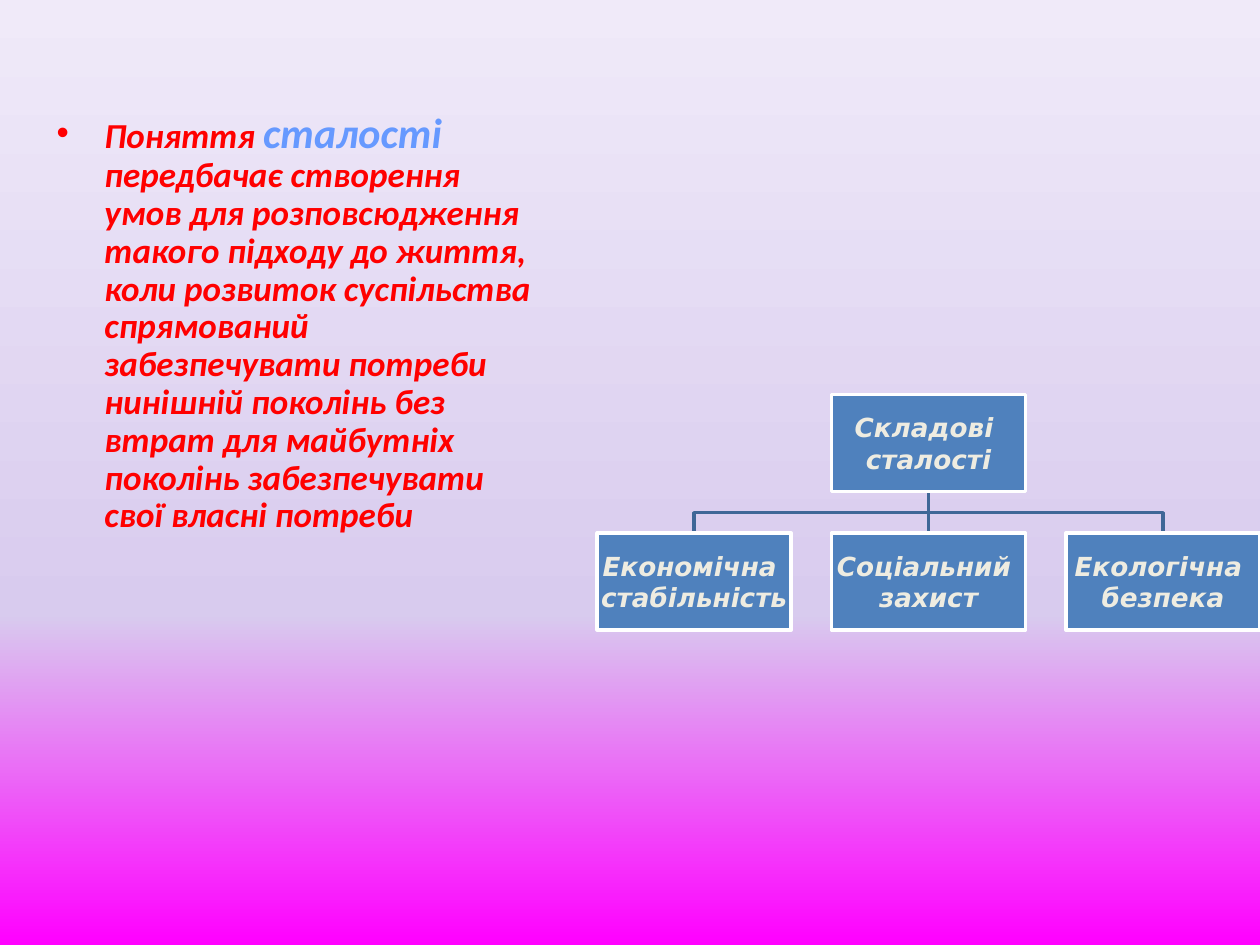
from lxml import etree
from pptx import Presentation, util as u
from pptx.dml.color import RGBColor
from pptx.enum import shapes, text
from pptx.oxml.ns import qn

HUES = {
    "pink": "FF00FF", "lilac": "D8CBEE", "pale": "F0EAF9",
    "red": "FF0000", "sky": "6699FF", "blue": "4F81BD",
    "navy": "3F6797", "white": "FFFFFF", "cream": "EEECE1",
}
WIDE, HIGH = 1.54, 0.77
LEFT, STEP = 4.74, 1.86
TOP, LOW = 3.13, 4.23
ROOT = ("Складові ", "сталості")
LEAVES = [
    ("Економічна ", "стабільність"),
    ("Соціальний ", "захист"),
    ("Екологічна ", "безпека"),
]
BODY = [
    ("Поняття ", 20, "red"),
    ("сталості ", 24, "sky"),
    ("передбачає створення умов для розповсюдження такого підходу до життя, "
     "коли розвиток суспільства спрямований забезпечувати потреби нинішній "
     "поколінь без втрат для майбутніх поколінь забезпечувати свої власні "
     "потреби", 20, "red"),
]


def hue(name):
    return RGBColor.from_string(HUES[name])


def add_run(para, words, size, face, name):
    run = para.add_run()
    run.text = words
    font = run.font
    font.size, font.name = u.Pt(size), face
    font.bold = font.italic = True
    font.color.rgb = hue(name)


def set_line(shape, name):
    shape.line.color.rgb = hue(name)
    shape.line.width = u.Pt(2)


def paint_back(slide):
    fill = slide.background.fill
    fill.gradient()
    fill.gradient_angle = 90
    stops = slide.background._cSld.find(".//" + qn("a:gsLst"))
    for old in list(stops):
        stops.remove(old)
    for pos, name in ((0, "pink"), (35, "lilac"), (100, "pale")):
        stop = etree.SubElement(stops, qn("a:gs"), pos=str(pos * 1000))
        etree.SubElement(stop, qn("a:srgbClr"), val=HUES[name])


def add_body(slide):
    box = slide.shapes.add_textbox(
        u.Inches(0.35), u.Inches(0.84), u.Inches(4.02), u.Inches(5.75))
    frame = box.text_frame
    frame.word_wrap = True
    para = frame.paragraphs[0]
    para.line_spacing = 0.9
    para.space_before = u.Pt(4)
    props = para._p.get_or_add_pPr()
    props.set("marL", str(u.Inches(0.38)))
    props.set("indent", str(u.Inches(-0.38)))
    etree.SubElement(props, qn("a:buFont"), typeface="Arial")
    etree.SubElement(props, qn("a:buChar"), char="•")
    for words, size, name in BODY:
        add_run(para, words, size, "Calibri", name)


def add_node(slide, left, top, lines):
    node = slide.shapes.add_shape(
        shapes.MSO_SHAPE.RECTANGLE,
        u.Inches(left), u.Inches(top), u.Inches(WIDE), u.Inches(HIGH))
    node.shadow.inherit = False
    node.fill.solid()
    node.fill.fore_color.rgb = hue("blue")
    set_line(node, "white")
    frame = node.text_frame
    frame.word_wrap = True
    frame.vertical_anchor = text.MSO_ANCHOR.MIDDLE
    frame.margin_left = frame.margin_right = u.Inches(0.01)
    frame.margin_top = frame.margin_bottom = u.Inches(0.01)
    for i, words in enumerate(lines):
        para = frame.add_paragraph() if i else frame.paragraphs[0]
        para.alignment = text.PP_ALIGN.CENTER
        add_run(para, words, 15, "DejaVu Sans", "cream")


def add_elbow(slide, start, end):
    mid = 4.07
    points = [(start, TOP + HIGH), (start, mid), (end, mid), (end, LOW)]
    first, *rest = [(u.Inches(x), u.Inches(y)) for x, y in points]
    path = slide.shapes.build_freeform(*first)
    path.add_line_segments(rest, close=False)
    elbow = path.convert_to_shape()
    elbow.shadow.inherit = False
    elbow.fill.background()
    set_line(elbow, "navy")


def add_stem(slide, x):
    stem = slide.shapes.add_connector(
        shapes.MSO_CONNECTOR.STRAIGHT,
        u.Inches(x), u.Inches(TOP + HIGH), u.Inches(x), u.Inches(LOW))
    set_line(stem, "navy")
    etree.SubElement(stem._element.spPr, qn("a:effectLst"))


def add_tree(slide):
    mid = LEFT + STEP
    hub = mid + WIDE / 2
    add_elbow(slide, hub, hub + STEP)
    add_stem(slide, hub)
    add_elbow(slide, hub, hub - STEP)
    add_node(slide, mid, TOP, ROOT)
    for i, lines in enumerate(LEAVES):
        add_node(slide, LEFT + i * STEP, LOW, lines)


def main():
    deck = Presentation()
    deck.slide_width, deck.slide_height = u.Inches(10), u.Inches(7.5)
    slide = deck.slides.add_slide(deck.slide_layouts[6])
    paint_back(slide)
    add_body(slide)
    add_tree(slide)
    deck.save("out.pptx")


if __name__ == "__main__":
    main()
